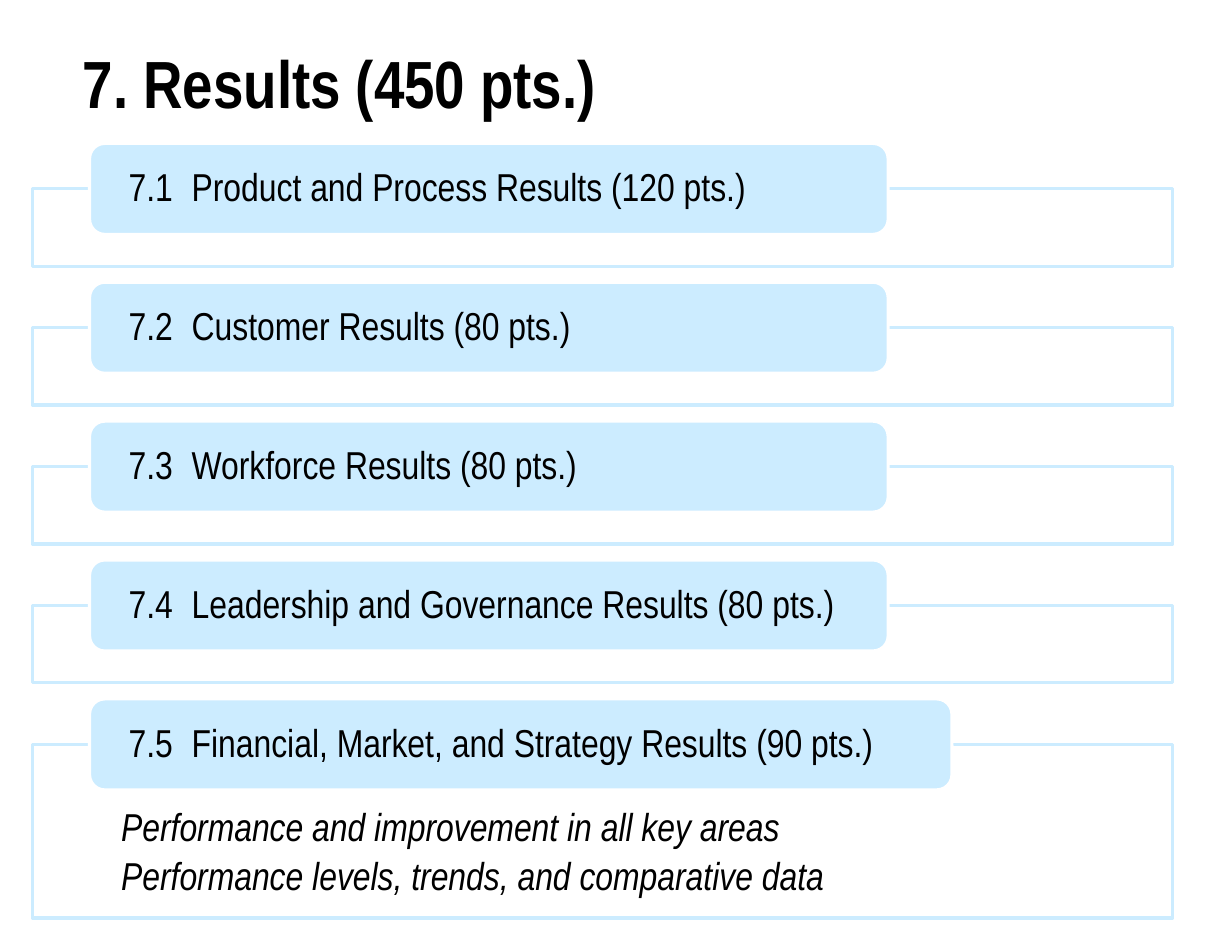
import dataclasses

import pptx
import pptx.dml.color
import pptx.enum.shapes
import pptx.enum.text
import pptx.oxml
import pptx.oxml.ns
import pptx.util
from pptx.util import Pt

RGB = pptx.dml.color.RGBColor
SHAPE = pptx.enum.shapes.MSO_SHAPE
ANCHOR = pptx.enum.text.MSO_ANCHOR
ALIGN = pptx.enum.text.PP_ALIGN


@dataclasses.dataclass(frozen=True)
class Theme:
    font: str = "Arial Narrow"
    ink: RGB = RGB(0, 0, 0)
    paper: RGB = RGB(255, 255, 255)
    accent: RGB = RGB(0xCC, 0xEC, 0xFF)
    title_size: float = 42.9
    body_size: float = 25
    rule: float = 2


THEME = Theme()

TITLE = "7. Results (450 pts.)"
ITEMS = [
    # number, heading, label width, frame height, details
    ("7.1", "Product and Process Results (120 pts.)", 513.4, 49.7, []),
    ("7.2", "Customer Results (80 pts.)", 513.4, 49.7, []),
    ("7.3", "Workforce Results (80 pts.)", 513.4, 49.7, []),
    ("7.4", "Leadership and Governance Results (80 pts.)", 513.4, 49.7, []),
    ("7.5", "Financial, Market, and Strategy Results (90 pts.)", 554.4, 111.6,
     ["Performance and improvement in all key areas",
      "Performance levels, trends, and comparative data"]),
]
LIST_LEFT, LIST_TOP, LIST_WIDTH = 20.9, 92.2, 733
ITEM_PITCH = 89.28
LABEL_INDENT, LABEL_HEIGHT = 36.7, 58.5
HEADING_TAB = 40.5


def set_insets(frame, left, top, right, bottom):
    frame.margin_left, frame.margin_top = Pt(left), Pt(top)
    frame.margin_right, frame.margin_bottom = Pt(right), Pt(bottom)
    frame.word_wrap = True


def add_text(paragraph, text, size, bold=False, italic=False):
    paragraph.alignment = ALIGN.LEFT
    run = paragraph.add_run()
    run.text = text
    run.font.name = THEME.font
    run.font.size = Pt(size)
    run.font.bold = bold
    run.font.italic = italic
    run.font.color.rgb = THEME.ink


def add_tab_stop(paragraph, position):
    ns = pptx.oxml.ns.nsdecls("a")
    paragraph._p.get_or_add_pPr().append(pptx.oxml.parse_xml(
        f'<a:tabLst {ns}><a:tab pos="{int(Pt(position))}" algn="l"/></a:tabLst>'))


def add_panel(slide, kind, left, top, width, height, fill, line):
    panel = slide.shapes.add_shape(kind, Pt(left), Pt(top), Pt(width), Pt(height))
    panel.shadow.inherit = False
    panel.fill.solid()
    panel.fill.fore_color.rgb = fill
    panel.line.color.rgb = line
    panel.line.width = Pt(THEME.rule)
    return panel


def place_title(slide, left, top, width, height):
    title = slide.shapes.title
    title.left, title.top = Pt(left), Pt(top)
    title.width, title.height = Pt(width), Pt(height)
    frame = title.text_frame
    set_insets(frame, 7.2, 3.6, 7.2, 3.6)
    frame.vertical_anchor = ANCHOR.BOTTOM
    add_text(frame.paragraphs[0], TITLE, THEME.title_size, bold=True)


def add_details(frame, details):
    set_insets(frame, 57, 41, 57, 13.7)
    frame.vertical_anchor = ANCHOR.TOP
    for index, detail in enumerate(details):
        paragraph = frame.paragraphs[0] if index == 0 else frame.add_paragraph()
        paragraph.line_spacing = 0.9
        paragraph.space_after = Pt(4.5)
        add_text(paragraph, detail, THEME.body_size, italic=True)


def add_item(slide, left, top, width, item):
    """Outline frame with a label straddling its top edge."""
    number, heading, label_width, frame_height, details = item
    outline = add_panel(slide, SHAPE.RECTANGLE, left, top + LABEL_HEIGHT / 2,
                        width, frame_height, THEME.paper, THEME.accent)
    if details:
        add_details(outline.text_frame, details)

    label = add_panel(slide, SHAPE.ROUNDED_RECTANGLE, left + LABEL_INDENT, top,
                      label_width, LABEL_HEIGHT, THEME.accent, THEME.paper)
    set_insets(label.text_frame, 22.3, 0, 22.3, 0)
    label.text_frame.vertical_anchor = ANCHOR.MIDDLE
    paragraph = label.text_frame.paragraphs[0]
    add_tab_stop(paragraph, HEADING_TAB)
    paragraph.line_spacing = 0.9
    add_text(paragraph, f"{number}\t{heading}", THEME.body_size)


def main():
    deck = pptx.Presentation()
    deck.slide_width, deck.slide_height = Pt(792), Pt(612)
    slide = deck.slides.add_slide(deck.slide_layouts[5])
    place_title(slide, 46, 23, 576, 59)
    for row, item in enumerate(ITEMS):
        add_item(slide, LIST_LEFT, LIST_TOP + row * ITEM_PITCH, LIST_WIDTH, item)
    deck.save("out.pptx")


if __name__ == "__main__":
    main()
